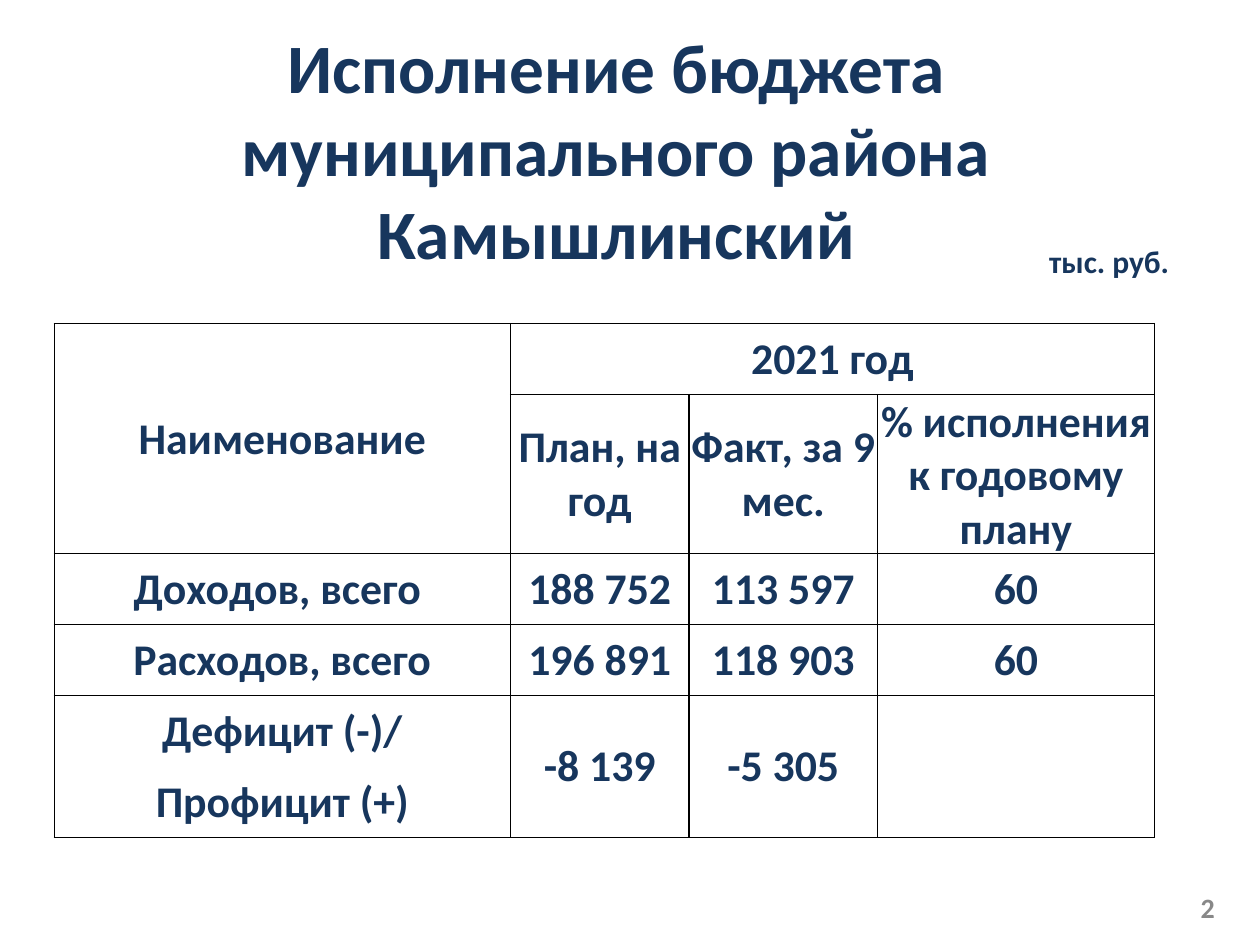
import lxml.etree
import pptx
import pptx.dml.color
import pptx.enum.text
import pptx.oxml.ns
import pptx.util
from pptx.util import Cm

THEME = {
    "font": "Calibri",
    "text": "17365D",
    "muted": "888888",
    "border": "000000",
    "border_width": 0.75,
    "title_size": 39.6,
    "unit_size": 18,
    "table_size": 25,
    "number_size": 16,
}

TITLE = "Исполнение бюджета муниципального района Камышлинский"
UNIT = "тыс. руб."
SLIDE_NUMBER = "2"
ROWS = [
    ["Наименование", "2021 год", "", ""],
    ["", "План, на год", "Факт, за 9 мес.", "% исполнения к годовому плану"],
    ["Доходов, всего ", "188 752", "113 597", "60"],
    ["Расходов, всего", "196 891", "118 903", "60"],
    ["Дефицит (-)/", "-8 139", "-5 305", ""],
    ["Профицит (+)", "", "", ""],
]
# First and last cell of each merged area, as (row, column)
MERGES = [((0, 0), (1, 0)), ((0, 1), (0, 3))] + [((4, column), (5, column)) for column in (1, 2, 3)]
# Sides left without a line, so that the two balance rows read as one cell
OPEN_SIDES = {(4, 0): "B", (5, 0): "T"}

COLUMN_WIDTHS = [9.2, 3.6, 3.8, 5.58]
ROW_HEIGHT = 1.43
ROW_HEIGHTS = [ROW_HEIGHT, 2 * ROW_HEIGHT] + [ROW_HEIGHT] * 4
TABLE_LEFT, TABLE_TOP = 1.09, 6.52

CENTER = pptx.enum.text.PP_ALIGN.CENTER
LEFT = pptx.enum.text.PP_ALIGN.LEFT
MIDDLE = pptx.enum.text.MSO_ANCHOR.MIDDLE
TOP = pptx.enum.text.MSO_ANCHOR.TOP


def write_text(text_frame, text, *, size, color=THEME["text"], align=CENTER):
    paragraph = text_frame.paragraphs[0]
    paragraph.alignment = align
    run = paragraph.add_run()
    run.text = text
    run.font.name = THEME["font"]
    run.font.size = pptx.util.Pt(size)
    run.font.bold = True
    run.font.color.rgb = pptx.dml.color.RGBColor.from_string(color)


def add_label(slide, text, box, *, anchor=MIDDLE, wrap=True, **text_format):
    shape = slide.shapes.add_textbox(*map(Cm, box))
    shape.text_frame.word_wrap = wrap
    shape.text_frame.vertical_anchor = anchor
    write_text(shape.text_frame, text, **text_format)


def set_borders(cell, open_side):
    """Draw a line on every side of the cell except open_side (L, R, T, B or None)."""
    properties = cell._tc.get_or_add_tcPr()
    qualified = pptx.oxml.ns.qn
    for side in "LRTB":
        line = lxml.etree.SubElement(properties, qualified(f"a:ln{side}"))
        line.set("w", str(int(pptx.util.Pt(THEME["border_width"]))))
        if side == open_side:
            lxml.etree.SubElement(line, qualified("a:noFill"))
        else:
            fill = lxml.etree.SubElement(line, qualified("a:solidFill"))
            lxml.etree.SubElement(fill, qualified("a:srgbClr")).set("val", THEME["border"])


def add_budget_table(slide):
    frame = slide.shapes.add_table(
        len(ROWS), len(COLUMN_WIDTHS), Cm(TABLE_LEFT), Cm(TABLE_TOP),
        Cm(sum(COLUMN_WIDTHS)), Cm(sum(ROW_HEIGHTS)))
    table = frame.table
    table.first_row = table.horz_banding = False
    for column, width in zip(table.columns, COLUMN_WIDTHS):
        column.width = Cm(width)
    for row, height in zip(table.rows, ROW_HEIGHTS):
        row.height = Cm(height)
    for first, last in MERGES:
        table.cell(*first).merge(table.cell(*last))
    for row_index, row in enumerate(ROWS):
        for column_index, text in enumerate(row):
            cell = table.cell(row_index, column_index)
            set_borders(cell, OPEN_SIDES.get((row_index, column_index)))
            cell.fill.background()
            cell.margin_left = cell.margin_right = cell.margin_top = Cm(0.03)
            cell.margin_bottom = 0
            cell.vertical_anchor = MIDDLE
            if text:
                write_text(cell.text_frame, text, size=THEME["table_size"])


def main():
    presentation = pptx.Presentation()
    presentation.slide_width, presentation.slide_height = Cm(25.4), Cm(19.05)
    slide = presentation.slides.add_slide(presentation.slide_layouts[6])
    add_label(slide, TITLE, (0.99, 0.71, 22.86, 4.57), size=THEME["title_size"])
    add_label(slide, UNIT, (20.9, 4.75, 2.95, 1.02), anchor=TOP, wrap=False,
              size=THEME["unit_size"], align=LEFT)
    add_budget_table(slide)
    add_label(slide, SLIDE_NUMBER, (23.29, 17.93, 2.11, 0.74),
              size=THEME["number_size"], color=THEME["muted"])
    presentation.save("out.pptx")


if __name__ == "__main__":
    main()
